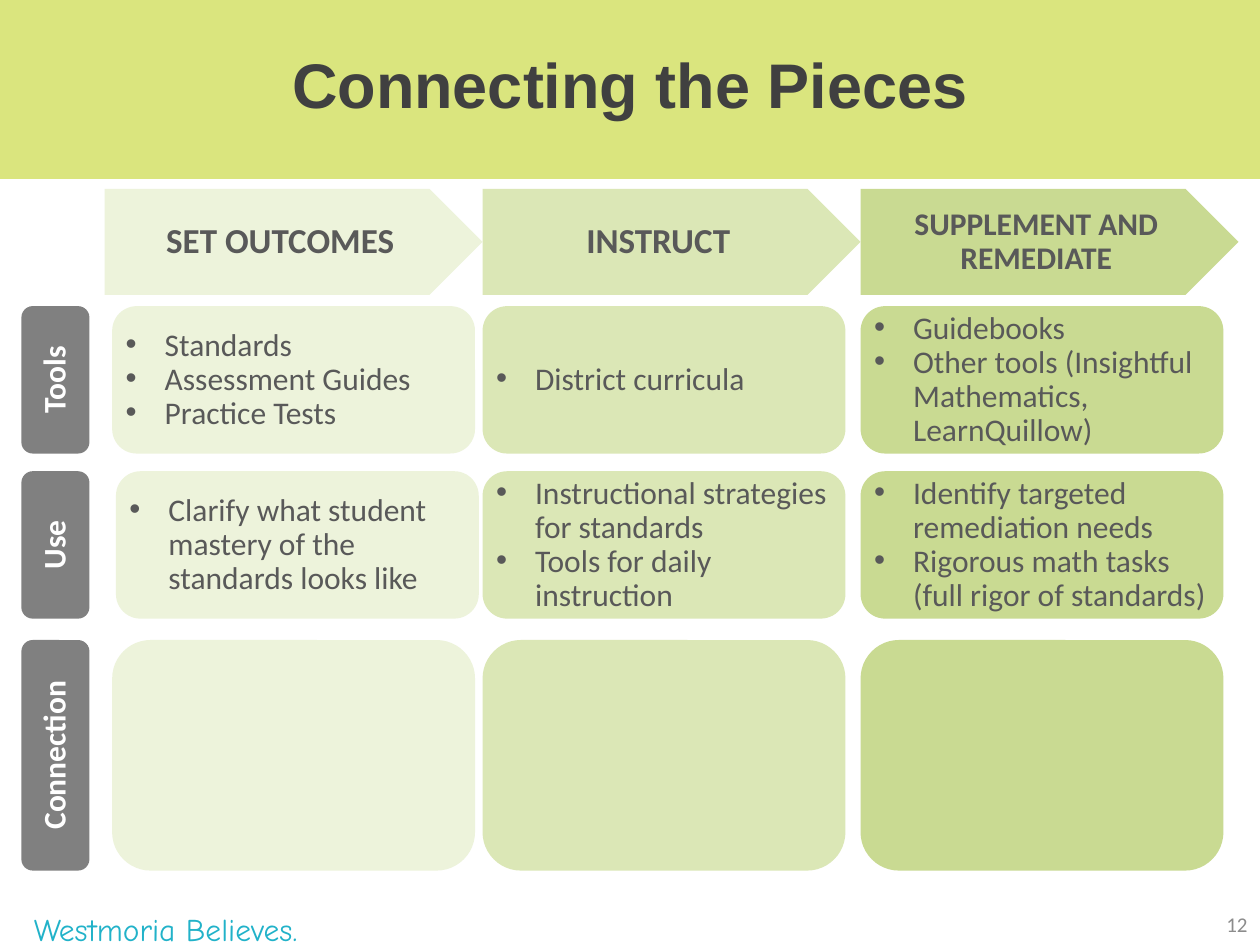
from pptx import Presentation
from pptx.dml.color import RGBColor
from pptx.enum.shapes import MSO_SHAPE
from pptx.enum.text import MSO_ANCHOR, PP_ALIGN
from pptx.util import Inches, Pt
from lxml.etree import SubElement
from pptx.oxml.ns import qn

COLORS = {
    "band": "DAE57E", "title": "404040", "body": "595959", "label": "808080",
    "white": "FFFFFF", "number": "8C8C8C", "tagline": "21B2C9",
    "outcomes": "EDF3DB", "instruct": "DBE7B6", "supplement": "C9DA92",
}


def write_text(frame, lines, size=18, color="body", font="Calibri", bold=False,
               align=PP_ALIGN.LEFT, anchor=MSO_ANCHOR.MIDDLE, spacing=None,
               inset=None, bullets=False):
    """Fill a text frame with one paragraph per line."""
    frame.word_wrap = True
    frame.vertical_anchor = anchor
    if inset is not None:
        frame.margin_left = frame.margin_right = Inches(inset)
        frame.margin_top = frame.margin_bottom = Inches(inset)
    for index, line in enumerate(lines):
        paragraph = frame.add_paragraph() if index else frame.paragraphs[0]
        paragraph.alignment = align
        if spacing:
            paragraph.line_spacing = spacing
        if bullets:
            properties = paragraph._p.get_or_add_pPr()
            properties.set("marL", str(Inches(0.31)))
            properties.set("indent", str(-Inches(0.31)))
            SubElement(properties, qn("a:buFont"), typeface="Arial")
            SubElement(properties, qn("a:buChar"), char="•")
        run = paragraph.add_run()
        run.text = line
        run.font.size = Pt(size)
        run.font.name = font
        run.font.bold = bold
        run.font.color.rgb = RGBColor.from_string(COLORS[color])


class SlideBuilder:
    """Holds the shared style and the current slide."""
    box_style = {"spacing": 0.9, "inset": 0.05}

    def __init__(self, slide):
        self.slide = slide

    def block(self, kind, left, top, width, height, fill):
        shape = self.slide.shapes.add_shape(
            kind, Inches(left), Inches(top), Inches(width), Inches(height))
        shape.shadow.inherit = False
        shape.fill.solid()
        shape.fill.fore_color.rgb = RGBColor.from_string(COLORS[fill])
        shape.line.fill.background()
        return shape

    def title(self, text):
        title = self.slide.shapes.title
        title.left, title.top = Inches(0), Inches(0)
        title.width, title.height = Inches(10), Inches(1.33)
        write_text(title.text_frame, [text], size=36, color="title",
                   font="Arial", bold=True, align=PP_ALIGN.CENTER)
        band = self.block(MSO_SHAPE.RECTANGLE, 0, 0, 10, 1.42, "band")
        title.element.addprevious(band.element)

    def stage(self, text, left, fill, size):
        arrow = self.block(MSO_SHAPE.PENTAGON, left, 1.5, 3, 0.84, fill)
        write_text(arrow.text_frame, [text], size=size, bold=True,
                   align=PP_ALIGN.CENTER, **self.box_style)

    def row_label(self, text, top, height):
        label = self.block(MSO_SHAPE.ROUNDED_RECTANGLE, 0.17, top, 0.54, height, "label")
        write_text(label.text_frame, [text], color="white", bold=True,
                   align=PP_ALIGN.CENTER, **self.box_style)
        label.text_frame._txBody.bodyPr.set("vert", "vert270")

    def card(self, lines, left, top, height, fill):
        card = self.block(MSO_SHAPE.ROUNDED_RECTANGLE, left, top, 2.88, height, fill)
        if lines:
            write_text(card.text_frame, lines, bullets=True, **self.box_style)

    def note(self, text, left, width, **style):
        box = self.slide.shapes.add_textbox(
            Inches(left), Inches(7.17), Inches(width), Inches(0.33))
        write_text(box.text_frame, [text], **style)


# Stages: heading, arrow left, card left, fill, heading size
STAGES = [
    ("SET OUTCOMES", 0.83, 0.89, "outcomes", 20),
    ("INSTRUCT", 3.83, 3.83, "instruct", 20),
    ("SUPPLEMENT AND REMEDIATE", 6.83, 6.83, "supplement", 18),
]

# Rows: label, top, height, shift of the first card, card texts by stage
ROWS = [
    ("Tools", 2.43, 1.17, 0, [
        ["Standards", "Assessment Guides", "Practice Tests"],
        ["District curricula"],
        ["Guidebooks", "Other tools (Insightful Mathematics, LearnQuillow)"]]),
    ("Use", 3.74, 1.17, 0.03, [
        ["Clarify what student mastery of the standards looks like"],
        ["Instructional strategies for standards", "Tools for daily instruction"],
        ["Identify targeted remediation needs",
         "Rigorous math tasks (full rigor of standards)"]]),
    ("Connection", 5.08, 1.83, 0, [[], [], []]),
]


def main():
    presentation = Presentation()
    presentation.slide_width = Inches(10)
    presentation.slide_height = Inches(7.5)
    builder = SlideBuilder(presentation.slides.add_slide(presentation.slide_layouts[5]))

    # Title band
    builder.title("Connecting the Pieces")

    # Stage arrows
    for heading, arrow_left, _, fill, size in STAGES:
        builder.stage(heading, arrow_left, fill, size)

    # Row labels and cards
    for label, top, height, shift, cells in ROWS:
        builder.row_label(label, top, height)
        for column, (stage, lines) in enumerate(zip(STAGES, cells)):
            left = stage[2] + (0 if column else shift)
            builder.card(lines, left, top, height, stage[3])

    # Footer
    builder.note("Westmoria Believes.", 0.17, 3.17, color="tagline",
                 font="Comic Neue", anchor=MSO_ANCHOR.TOP)
    builder.note("12", 7.67, 2.33, size=12, color="number", align=PP_ALIGN.RIGHT)

    presentation.save("out.pptx")


if __name__ == "__main__":
    main()
